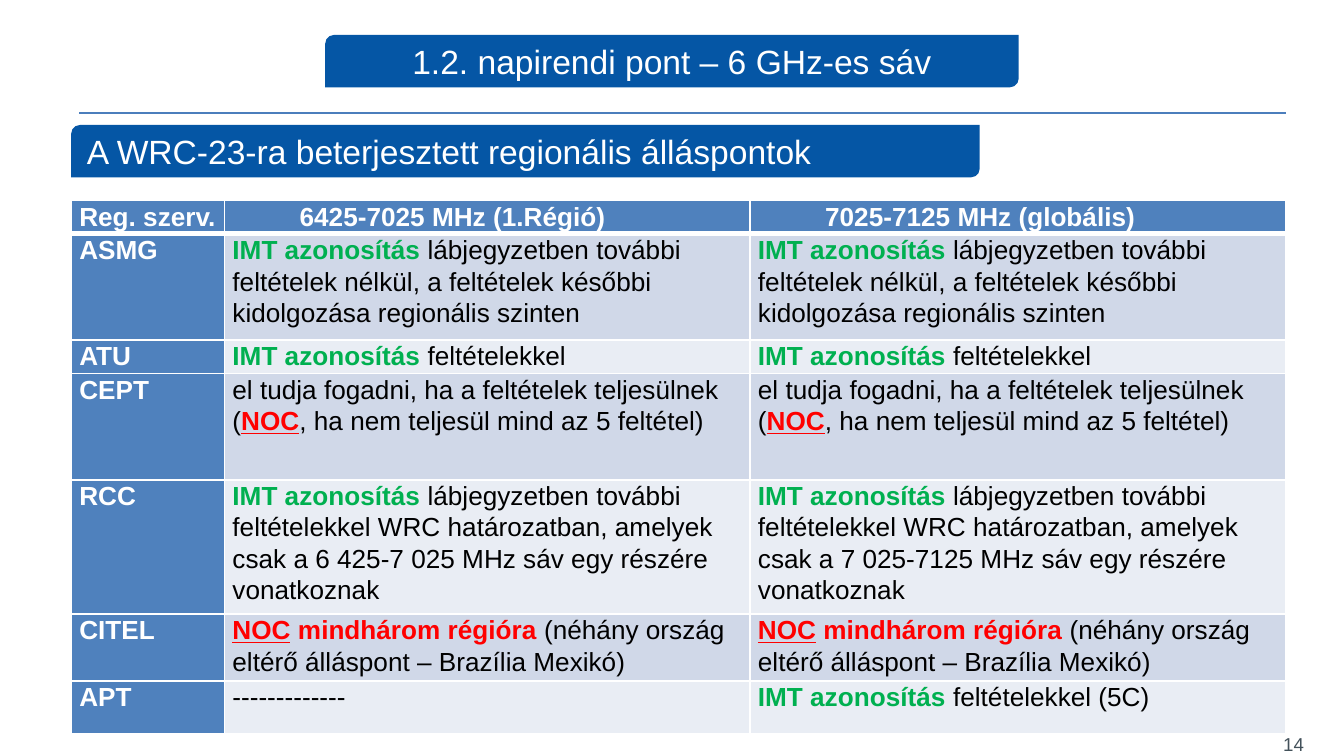
from lxml import etree
from pptx import Presentation
from pptx import util as u
from pptx.dml.color import RGBColor
from pptx.enum import shapes, text
from pptx.oxml.ns import qn

FONT = "Arial"
WHITE, BLACK, GREEN, RED = "FFFFFF", "000000", "00B050", "FF0000"
BANNER, RULE, HEAD, NUMBER = "0556A5", "4B7EBC", "4F81BD", "43515A"
BANDS = ["D0D8E8", "E9EDF4"]
COLUMNS = [1.14, 3.91, 3.99]
ROWS = [0.23, 0.79, 0.21, 0.79, 0.99, 0.21, 0.39]

IMT = ("IMT azonosítás ", GREEN, True, False)
NOC = ("NOC", RED, True, True)


def plain(words):
    """Describe a run of body text."""
    return (words, BLACK, False, False)


def label(words):
    """Describe a run of heading text."""
    return (words, WHITE, True, False)


def rcc(band):
    """Describe the RCC position on a band."""
    return [IMT, plain("lábjegyzetben további feltételekkel WRC határozatban, amelyek "
                       f"csak a {band} MHz sáv egy részére vonatkoznak")]


ASMG = [IMT, plain("lábjegyzetben további feltételek nélkül, a feltételek későbbi "
                   "kidolgozása regionális szinten")]
ATU = [IMT, plain("feltételekkel")]
CEPT = [plain("el tudja fogadni, ha a feltételek teljesülnek ("), NOC,
        plain(", ha nem teljesül mind az 5 feltétel)")]
CITEL = [NOC, (" mindhárom régióra ", RED, True, False),
         plain("(néhány ország eltérő álláspont – Brazília Mexikó)")]
POSITIONS = [
    ("Reg. szerv.", [label("6425-7025 MHz (1.Régió)")], [label("7025-7125 MHz (globális)")]),
    ("ASMG", ASMG, ASMG),
    ("ATU", ATU, ATU),
    ("CEPT", CEPT, CEPT),
    ("RCC", rcc("6 425-7 025"), rcc("7 025-7125")),
    ("CITEL", CITEL, CITEL),
    ("APT", [plain("-------------")], [IMT, plain("feltételekkel (5C)")]),
]


def rgb(value):
    """Turn a hex string into a colour."""
    return RGBColor.from_string(value)


def inches(box):
    """Turn a box in inches into lengths."""
    return [u.Inches(length) for length in box]


def add_run(paragraph, words, size, colour, bold=False, underline=False):
    """Add one formatted run to a paragraph."""
    run = paragraph.add_run()
    run.text = words
    font = run.font
    font.name, font.size, font.bold = FONT, u.Pt(size), bold
    font.underline = underline
    font.color.rgb = rgb(colour)


def add_banner(slide, box, words, align):
    """Place a blue heading banner in the box."""
    banner = slide.shapes.add_shape(shapes.MSO_SHAPE.ROUND_2_DIAG_RECTANGLE, *inches(box))
    banner.shadow.inherit = False
    banner.fill.solid()
    banner.fill.fore_color.rgb = rgb(BANNER)
    banner.line.fill.background()
    frame = banner.text_frame
    frame.word_wrap = True
    frame.vertical_anchor = text.MSO_ANCHOR.MIDDLE
    frame.paragraphs[0].alignment = align
    add_run(frame.paragraphs[0], words, 18, WHITE)


def add_rule(slide, left, right, y):
    """Draw the thin horizontal rule under the title."""
    rule = slide.shapes.add_connector(shapes.MSO_CONNECTOR.STRAIGHT, *inches([left, y, right, y]))
    rule.line.color.rgb = rgb(RULE)
    rule.line.width = u.Pt(0.75)
    etree.SubElement(rule._element.spPr, qn("a:effectLst"))


def set_borders(cell, widths):
    """Give a cell white borders of the given point widths by side."""
    properties = cell._tc.get_or_add_tcPr()
    for side, width in widths.items():
        line = etree.SubElement(properties, qn(f"a:ln{side}"), w=str(u.Pt(width)))
        fill = etree.SubElement(line, qn("a:solidFill"))
        etree.SubElement(fill, qn("a:srgbClr"), val=WHITE)


def fill_cell(cell, runs, row, column):
    """Format one table cell and write its runs."""
    set_borders(cell, {"L": 1, "R": 1, "T": 3 if row == 1 else 1, "B": 3 if row == 0 else 1})
    cell.fill.solid()
    is_head = row == 0 or column == 0
    cell.fill.fore_color.rgb = rgb(HEAD if is_head else BANDS[(row - 1) % 2])
    cell.margin_left = cell.margin_right = u.Inches(0.06)
    cell.margin_top = cell.margin_bottom = 0
    paragraph = cell.text_frame.paragraphs[0]
    paragraph.line_spacing = 1.07
    if row == 0 and column > 0:
        paragraph._p.get_or_add_pPr().set("marL", str(u.Inches(0.5)))
    for words, colour, bold, underline in runs:
        add_run(paragraph, words, 14, colour, bold, underline)


def add_positions(slide, box):
    """Place the table of regional positions in the box."""
    holder = slide.shapes.add_table(len(ROWS), len(COLUMNS), *inches(box))
    table = holder.table
    for column, width in zip(table.columns, COLUMNS):
        column.width = u.Inches(width)
    for row, height in zip(table.rows, ROWS):
        row.height = u.Inches(height)
    holder.height = u.Inches(box[3])
    for row, (organisation, *stances) in enumerate(POSITIONS):
        for column, runs in enumerate([[label(organisation)], *stances]):
            fill_cell(table.cell(row, column), runs, row, column)


def add_page_number(slide, box, number):
    """Place the page number in the box."""
    frame = slide.shapes.add_textbox(*inches(box)).text_frame
    frame.word_wrap = True
    frame.vertical_anchor = text.MSO_ANCHOR.MIDDLE
    frame.paragraphs[0].alignment = text.PP_ALIGN.RIGHT
    add_run(frame.paragraphs[0], number, 10, NUMBER)


def main():
    """Build the slide and save it."""
    deck = Presentation()
    deck.slide_width = u.Inches(10)
    deck.slide_height = deck.slide_width * 9 // 16
    slide = deck.slides.add_slide(deck.slide_layouts[6])
    add_page_number(slide, [9.33, 5.39, 0.47, 0.3], "14")
    add_rule(slide, 0.59, 9.57, 0.84)
    add_banner(slide, [0.53, 0.93, 6.76, 0.39],
               "A WRC-23-ra beterjesztett regionális álláspontok", text.PP_ALIGN.LEFT)
    add_positions(slide, [0.53, 1.49, 9.04, 3.92])
    add_banner(slide, [2.42, 0.26, 5.16, 0.39],
               "1.2. napirendi pont – 6 GHz-es sáv", text.PP_ALIGN.CENTER)
    deck.save("out.pptx")


if __name__ == "__main__":
    main()
